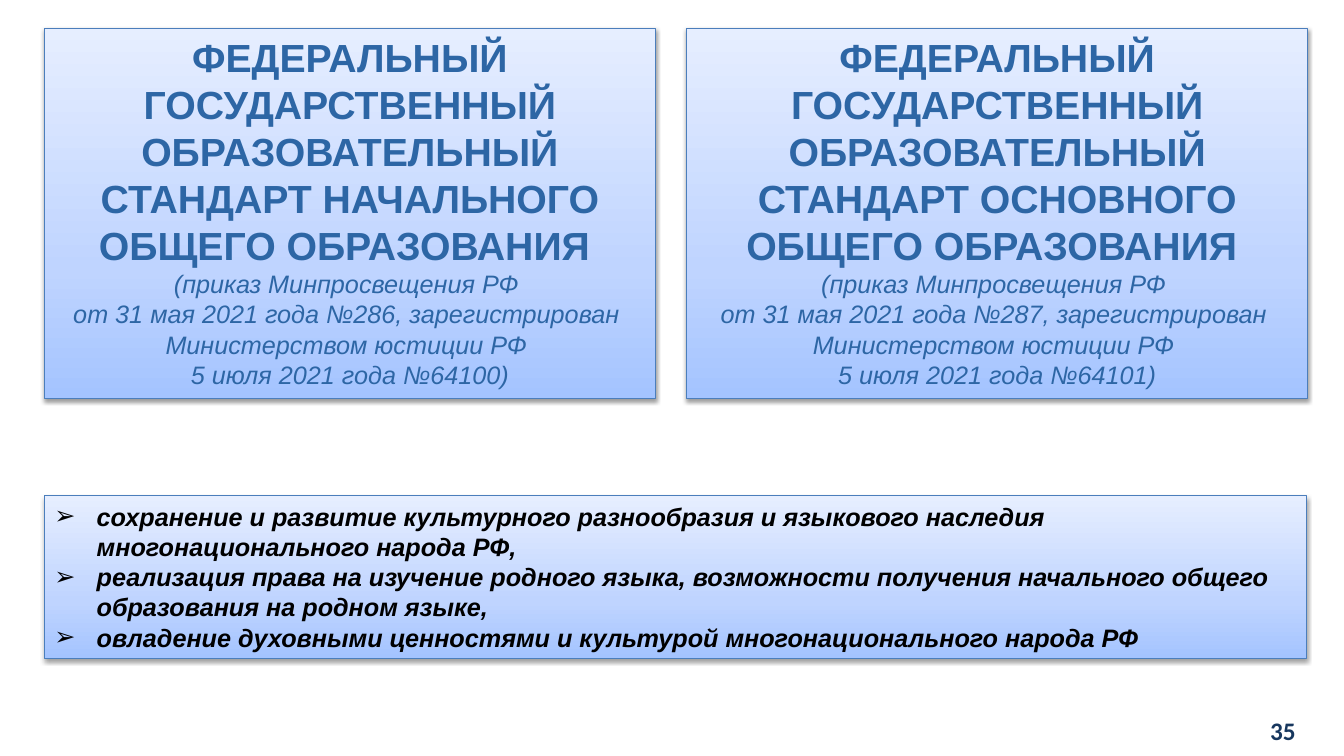
from copy import deepcopy

from lxml import etree
from pptx import Presentation
from pptx.dml.color import RGBColor
from pptx.enum.shapes import MSO_SHAPE
from pptx.enum.text import MSO_ANCHOR, MSO_AUTO_SIZE, PP_ALIGN
from pptx.oxml import parse_xml
from pptx.oxml.ns import nsdecls, qn
from pptx.util import Inches, Pt

RECT = MSO_SHAPE.RECTANGLE
TOP, MIDDLE = MSO_ANCHOR.TOP, MSO_ANCHOR.MIDDLE
GROW = MSO_AUTO_SIZE.SHAPE_TO_FIT_TEXT
LEFT, CENTER, RIGHT = PP_ALIGN.LEFT, PP_ALIGN.CENTER, PP_ALIGN.RIGHT

BLUE = RGBColor(0x2D, 0x66, 0xA5)
NAVY = RGBColor(0x17, 0x37, 0x5E)
EDGE = RGBColor(0x4B, 0x7E, 0xBC)
BLACK = RGBColor(0, 0, 0)
SHADES = [
    (0, RGBColor(0xA4, 0xC4, 0xFF)),
    (0.35, RGBColor(0xBF, 0xD4, 0xFF)),
    (1, RGBColor(0xE6, 0xEE, 0xFF)),
]
SHADOW = (
    f'<a:outerShdw {nsdecls("a")} blurRad="40000" dist="20000" dir="5400000" '
    'rotWithShape="0"><a:srgbClr val="000000"><a:alpha val="38000"/>'
    "</a:srgbClr></a:outerShdw>"
)

CARDS = [
    (0.44, 6.06, "НАЧАЛЬНОГО", "286", "64100"),
    (6.81, 6.16, "ОСНОВНОГО", "287", "64101"),
]
GOALS = [
    "сохранение и развитие культурного разнообразия и языкового наследия "
    "многонационального народа РФ,",
    "реализация права на изучение родного языка, возможности получения "
    "начального общего образования на родном языке,",
    "овладение духовными ценностями и культурой многонационального народа РФ",
]


def add_panel(slide, left, top, width, height):
    """Add a gradient rectangle with a thin edge and a soft shadow."""
    panel = slide.shapes.add_shape(
        RECT, Inches(left), Inches(top), Inches(width), Inches(height)
    )
    panel.fill.gradient()
    panel.fill.gradient_angle = 90
    props = panel._element.spPr
    stops = props.find(".//" + qn("a:gsLst"))
    stops.append(deepcopy(stops[0]))
    for stop, (place, shade) in zip(panel.fill.gradient_stops, SHADES):
        stop.position = place
        stop.color.rgb = shade
    panel.line.color.rgb = EDGE
    panel.line.width = Pt(0.75)
    panel.shadow.inherit = False
    props.find(qn("a:effectLst")).append(parse_xml(SHADOW))
    set_frame(panel.text_frame, 0.1, 0.05, TOP)
    return panel.text_frame


def set_frame(frame, side, edge, anchor):
    """Set wrapping, margins and anchor of a text frame."""
    frame.word_wrap = True
    frame.auto_size = GROW
    frame.vertical_anchor = anchor
    frame.margin_left = frame.margin_right = Inches(side)
    frame.margin_top = frame.margin_bottom = Inches(edge)


def add_line(frame, text, size, color, align, bold=False, italic=False, face="Arial"):
    """Fill the empty first paragraph or add a new one."""
    first = frame.paragraphs[0]
    para = frame.add_paragraph() if first.runs else first
    para.alignment = align
    run = para.add_run()
    run.text = text
    font = run.font
    font.name, font.size = face, Pt(size)
    font.bold, font.italic = bold, italic
    font.color.rgb = color
    return para


def add_bullet(para):
    """Give a paragraph an arrow bullet with a hanging indent."""
    props = para._p.get_or_add_pPr()
    props.set("marL", str(Inches(0.42)))
    props.set("indent", str(-Inches(0.42)))
    etree.SubElement(props, qn("a:buFont")).set("typeface", "Arial")
    etree.SubElement(props, qn("a:buChar")).set("char", "➢")


def add_card(slide, left, width, level, order, record):
    """Add the panel of one education standard."""
    frame = add_panel(slide, left, 0.28, width, 3.67)
    title = (
        "ФЕДЕРАЛЬНЫЙ ГОСУДАРСТВЕННЫЙ ОБРАЗОВАТЕЛЬНЫЙ "
        f"СТАНДАРТ {level} ОБЩЕГО ОБРАЗОВАНИЯ "
    )
    add_line(frame, title, 28, BLUE, CENTER, bold=True)
    for text in (
        "(приказ Минпросвещения РФ ",
        f"от 31 мая 2021 года №{order}, зарегистрирован ",
        "Министерством юстиции РФ ",
        f"5 июля 2021 года №{record})",
    ):
        add_line(frame, text, 18, BLUE, CENTER, italic=True)


def add_goals(slide):
    """Add the wide panel with the bulleted goals."""
    frame = add_panel(slide, 0.44, 4.92, 12.52, 1.61)
    for goal in GOALS:
        add_bullet(add_line(frame, goal, 18, BLACK, LEFT, bold=True, italic=True))


def add_number(slide):
    """Add the page number."""
    box = slide.shapes.add_textbox(
        Inches(11.92), Inches(7.05), Inches(1.05), Inches(0.4)
    )
    set_frame(box.text_frame, 0.12, 0.06, MIDDLE)
    add_line(box.text_frame, "35", 18, NAVY, RIGHT, bold=True, face="Calibri")


def main():
    """Build and save the slide."""
    deck = Presentation()
    deck.slide_width, deck.slide_height = Inches(13.33), Inches(7.5)
    slide = deck.slides.add_slide(deck.slide_layouts[6])
    add_number(slide)
    for card in CARDS:
        add_card(slide, *card)
    add_goals(slide)
    deck.save("out.pptx")


if __name__ == "__main__":
    main()
